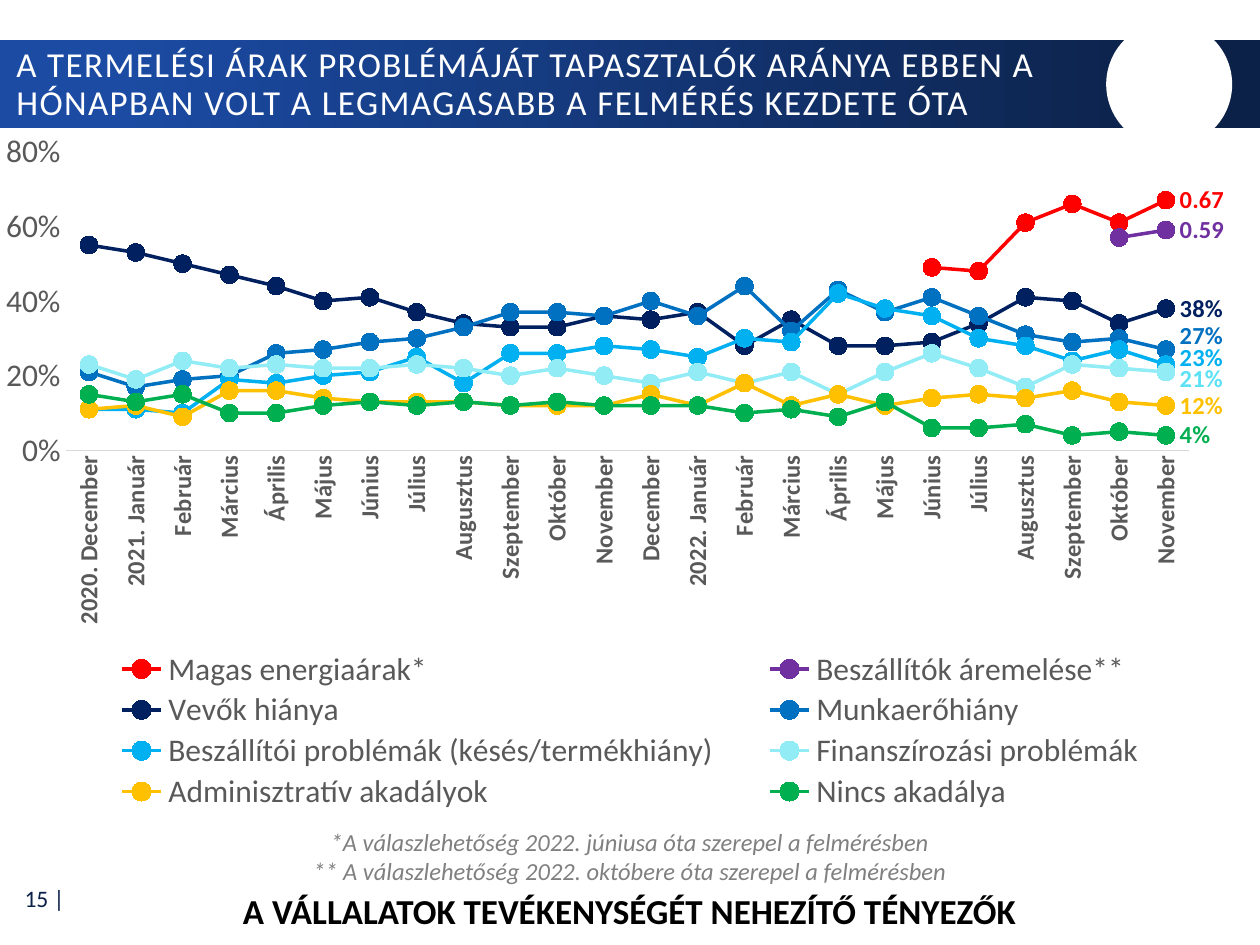
from dataclasses import dataclass

from lxml.etree import SubElement
from pptx import Presentation
from pptx.chart.data import CategoryChartData
from pptx.dml.color import RGBColor
from pptx.enum.chart import (XL_CHART_TYPE, XL_LABEL_POSITION, XL_LEGEND_POSITION,
                             XL_MARKER_STYLE, XL_TICK_MARK)
from pptx.enum.shapes import MSO_SHAPE
from pptx.enum.text import MSO_ANCHOR, PP_ALIGN
from pptx.oxml import parse_xml
from pptx.oxml.ns import nsdecls, qn
from pptx.util import Cm, Pt

FONT = "Calibri"
GREY = "595959"
MONTHS = ["Január", "Február", "Március", "Április", "Május", "Június", "Július",
          "Augusztus", "Szeptember", "Október", "November", "December"]
CATEGORIES = ["2020. December", "2021. Január", *MONTHS[1:], "2022. Január", *MONTHS[1:11]]


@dataclass
class Trend:
    name: str
    color: str
    percents: list[int]
    label_format: str = "0%"
    label_shift: float = 0
    label_color: str = ""


@dataclass
class Label:
    box: tuple[float, float, float, float]
    lines: list[str]
    font: dict
    color: str
    align: PP_ALIGN = PP_ALIGN.CENTER
    anchor: MSO_ANCHOR = MSO_ANCHOR.TOP
    line_spacing: float = 1
    tracking: int = 0


TRENDS = [
    Trend("Magas energiaárak*", "FF0000", [49, 48, 61, 66, 61, 67], "General"),
    Trend("Beszállítók áremelése**", "7030A0", [57, 59], "General"),
    Trend("Vevők hiánya", "002060",
          [55, 53, 50, 47, 44, 40, 41, 37, 34, 33, 33, 36,
           35, 37, 28, 35, 28, 28, 29, 34, 41, 40, 34, 38]),
    Trend("Munkaerőhiány", "0070C0",
          [21, 17, 19, 20, 26, 27, 29, 30, 33, 37, 37, 36,
           40, 36, 44, 32, 43, 37, 41, 36, 31, 29, 30, 27], label_shift=-0.02),
    Trend("Beszállítói problémák (késés/termékhiány)", "00B0F0",
          [11, 11, 10, 19, 18, 20, 21, 25, 18, 26, 26, 28,
           27, 25, 30, 29, 42, 38, 36, 30, 28, 24, 27, 23], label_shift=-0.01),
    Trend("Finanszírozási problémák", "92ECF6",
          [23, 19, 24, 22, 23, 22, 22, 23, 22, 20, 22, 20,
           18, 21, 18, 21, 15, 21, 26, 22, 17, 23, 22, 21],
          label_shift=0.01, label_color="5CE1F5"),
    Trend("Adminisztratív akadályok", "FFC000",
          [11, 12, 9, 16, 16, 14, 13, 13, 13, 12, 12, 12,
           15, 12, 18, 12, 15, 12, 14, 15, 14, 16, 13, 12]),
    Trend("Nincs akadálya", "00B050",
          [15, 13, 15, 10, 10, 12, 13, 12, 13, 12, 13, 12,
           12, 12, 10, 11, 9, 13, 6, 6, 7, 4, 5, 4]),
]

LABELS = [
    Label((0.03, 17.63, 1.52, 0.94), ["15 |"], {"size": Pt(13.5)}, "0C2148",
          PP_ALIGN.RIGHT, MSO_ANCHOR.MIDDLE),
    Label((0.08, 0.86, 22.3, 1.7),
          ["A TERMELÉSI ÁRAK PROBLÉMÁJÁT TAPASZTALÓK ARÁNYA EBBEN A "
           "HÓNAPBAN VOLT A LEGMAGASABB A FELMÉRÉS KEZDETE ÓTA"],
          {"size": Pt(20)}, "FFFFFF", PP_ALIGN.LEFT, MSO_ANCHOR.MIDDLE, 0.9, 80),
    Label((0, 16.54, 25.4, 1.45),
          ["*A válaszlehetőség 2022. júniusa óta szerepel a felmérésben",
           "** A válaszlehetőség 2022. októbere óta szerepel a felmérésben"],
          {"size": Pt(14), "italic": True}, "808080"),
    Label((2.46, 17.81, 20.47, 1.12), ["A VÁLLALATOK TEVÉKENYSÉGÉT NEHEZÍTŐ TÉNYEZŐK"],
          {"size": Pt(20), "bold": True}, "000000"),
]


def rgb(value: str) -> RGBColor:
    return RGBColor.from_string(value)


def set_font(font, color: str, **values) -> None:
    for name, value in {"name": FONT, **values}.items():
        setattr(font, name, value)
    font.color.rgb = rgb(color)


def set_fill(target, color: str) -> None:
    target.fill.solid()
    target.fill.fore_color.rgb = rgb(color)


def add_label(s, label: Label) -> None:
    tf = s.shapes.add_textbox(*map(Cm, label.box)).text_frame
    tf.word_wrap = True
    tf.vertical_anchor = label.anchor
    for i, line in enumerate(label.lines):
        p = tf.paragraphs[0] if i == 0 else tf.add_paragraph()
        p.alignment, p.line_spacing = label.align, label.line_spacing
        r = p.add_run()
        r.text = line
        set_font(r.font, label.color, **label.font)
        if label.tracking:
            r.font._element.set("spc", str(label.tracking))


def add_plain_shape(s, kind: MSO_SHAPE, box: tuple):
    sp = s.shapes.add_shape(kind, *map(Cm, box))
    sp.shadow.inherit = False
    sp.line.fill.background()
    return sp


def add_banner(s) -> None:
    band = add_plain_shape(s, MSO_SHAPE.RECTANGLE, (0, 0.81, 25.4, 1.78))
    band.fill.gradient()
    band.fill.gradient_angle = 0
    stops = ((0.09, "1B4BA3"), (0.95, "0C2148"))
    for stop, (position, color) in zip(band.fill.gradient_stops, stops):
        stop.position, stop.color.rgb = position, rgb(color)
    set_fill(add_plain_shape(s, MSO_SHAPE.OVAL, (22.3, 0.43, 2.54, 2.54)), "FFFFFF")


def manual_layout(**values):
    """Return a c:layout element holding the given manual layout values."""
    layout = parse_xml(f"<c:layout {nsdecls('c')}/>")
    manual = SubElement(layout, qn("c:manualLayout"))
    for name, value in values.items():
        SubElement(manual, qn(f"c:{name}")).set("val", str(value))
    return layout


def style_series(series, trend: Trend) -> None:
    series.smooth = False
    series.format.line.color.rgb = rgb(trend.color)
    series.format.line.width = Pt(2)
    marker = series.marker
    marker.style, marker.size = XL_MARKER_STYLE.CIRCLE, 10
    set_fill(marker.format, trend.color)
    marker.format.line.color.rgb = rgb(trend.color)

    series.data_labels.show_value = False
    last = len(CATEGORIES) - 1
    label = series.points[last].data_label
    set_font(label.font, trend.label_color or trend.color, size=Pt(14), bold=True)
    label.position = XL_LABEL_POSITION.RIGHT
    element = series.data_labels._element.find(qn("c:dLbl"))
    element.insert(1, parse_xml(
        f'<c:numFmt {nsdecls("c")} formatCode="{trend.label_format}" sourceLinked="0"/>'))
    if trend.label_shift:
        element.insert(1, manual_layout(x=0, y=trend.label_shift))


def style_axes(chart) -> None:
    months, shares = chart.category_axis, chart.value_axis
    for axis in (months, shares):
        axis.major_tick_mark = axis.minor_tick_mark = XL_TICK_MARK.NONE
        axis.has_major_gridlines = False
    set_font(months.tick_labels.font, GREY, size=Pt(14), bold=True)
    months.tick_labels._element.find(qn("c:txPr")).find(qn("a:bodyPr")).set("rot", "-5400000")
    months.format.line.color.rgb = rgb("D9D9D9")
    months.format.line.width = Pt(0.75)
    set_font(shares.tick_labels.font, GREY, size=Pt(18))
    shares.tick_labels.number_format = "0%"
    shares.tick_labels.number_format_is_linked = False
    shares.minimum_scale, shares.maximum_scale, shares.major_unit = 0, 0.8, 0.2
    shares.format.line.fill.background()


def add_trend_chart(s) -> None:
    data = CategoryChartData()
    data.categories = CATEGORIES
    for trend in TRENDS:
        gap = [None] * (len(CATEGORIES) - len(trend.percents))
        data.add_series(trend.name, gap + [v / 100 for v in trend.percents], trend.label_format)
    chart = s.shapes.add_chart(XL_CHART_TYPE.LINE_MARKERS, Cm(0), Cm(2.57),
                               Cm(25.4), Cm(13.97), data).chart
    set_font(chart.font, "000000", size=Pt(14))
    chart.has_title = False
    style_axes(chart)
    chart.plots[0].vary_by_categories = False
    for series, trend in zip(chart.plots[0].series, TRENDS):
        style_series(series, trend)

    area = chart._chartSpace.chart.plotArea
    for old in area.findall(qn("c:layout")):
        area.remove(old)
    area.insert(0, manual_layout(layoutTarget="inner", xMode="edge", yMode="edge",
                                 x=0.052, y=0.035, w=0.892, h=0.431))
    chart.has_legend = True
    legend = chart.legend
    legend.position, legend.include_in_layout = XL_LEGEND_POSITION.BOTTOM, False
    set_font(legend.font, GREY, size=Pt(18))
    for old in legend._element.findall(qn("c:layout")):
        legend._element.remove(old)
    legend._element.find(qn("c:legendPos")).addnext(
        manual_layout(xMode="edge", yMode="edge", x=0.06, y=0.75, w=0.88, h=0.24))


def main() -> None:
    prs = Presentation()
    prs.slide_width, prs.slide_height = Cm(25.4), Cm(19.05)
    s = prs.slides.add_slide(prs.slide_layouts[6])
    add_banner(s)
    for label in LABELS:
        add_label(s, label)
    add_trend_chart(s)
    prs.save("out.pptx")


if __name__ == "__main__":
    main()
